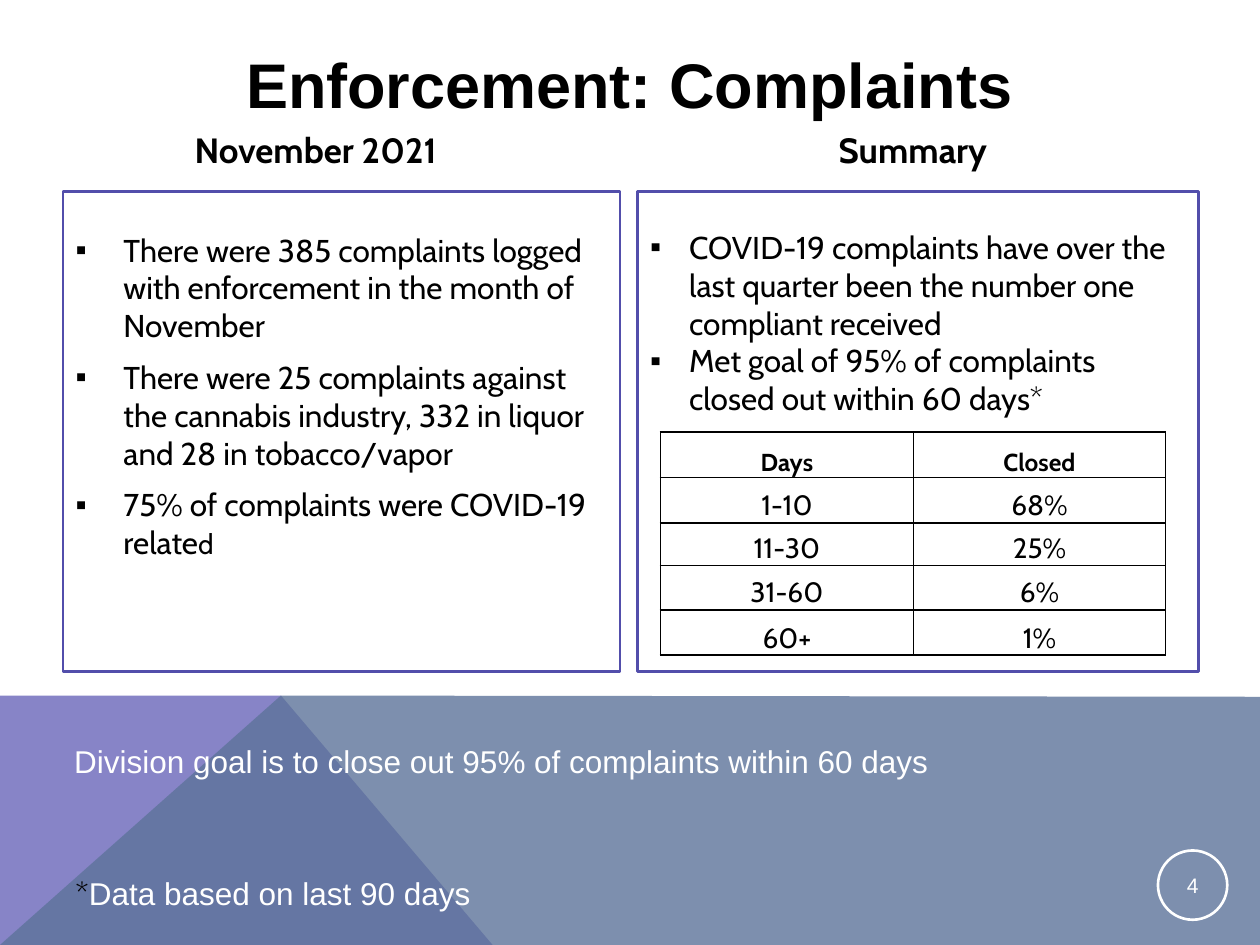
from lxml.etree import SubElement
from pptx import Presentation
from pptx.dml.color import RGBColor
from pptx.enum.shapes import MSO_SHAPE
from pptx.enum.text import MSO_ANCHOR, MSO_AUTO_SIZE, PP_ALIGN
from pptx.oxml.ns import qn
from pptx.util import Inches, Pt

BLACK, WHITE, PANEL_LINE = "000000", "FFFFFF", "524EAB"
TITLE = "Enforcement: Complaints"
HEADINGS = [("November 2021", (1.36, 0.97, 2.29, 0.44)),
            ("Summary", (6.12, 0.97, 2.25, 0.44))]
MONTH_POINTS = [
    ["There were 385 complaints logged with enforcement in the month of November"],
    ["There were 25 complaints against the cannabis industry, 332 in liquor and 28 in tobacco/vapor"],
    ["75% of complaints were COVID-19 relate", "d"],
]
SUMMARY_POINTS = [
    ["COVID-19 complaints have over the last quarter been the number one compliant received"],
    ["Met goal of 95% of complaints closed out within 60 days*"],
]
CLOSING_TIMES = [("Days", "Closed"), ("1-10", "68%"), ("11-30", "25%"),
                 ("31-60", "6%"), ("60+", "1%")]
COLUMN_WIDTHS = [2.01, 2]
ROW_HEIGHTS = [0.36, 0.36, 0.34, 0.35, 0.36]
GOAL = "Division goal is to close out 95% of complaints within 60 days"
FOOTNOTE = ("*", "Data based on last 90 days")
PAGE_NUMBER = "4"
BAND_SHAPES = [
    ([(0, 7.5), (0, 5.52), (2.23, 5.52), (3.91, 7.5)], "8784C7", 100),
    ([(0, 7.5), (2.23, 5.52), (10, 5.53), (10, 7.5)], "5D739A", 80),
]


def color(value):
    return RGBColor.from_string(value)


def inches(values):
    return [Inches(value) for value in values]


def place(shape, area):
    shape.left, shape.top, shape.width, shape.height = inches(area)


def set_font(font, size, name, value, bold=False):
    font.size, font.name, font.bold = Pt(size), name, bold
    font.color.rgb = color(value)


def add_band_shape(page, corners, fill, opacity):
    points = [inches(corner) for corner in corners]
    builder = page.shapes.build_freeform(*points[0])
    builder.add_line_segments(points[1:], close=True)
    shape = builder.convert_to_shape()
    shape.shadow.inherit = False
    shape.line.fill.background()
    shape.fill.solid()
    shape.fill.fore_color.rgb = color(fill)
    if opacity < 100:
        tint = shape.fill._xPr.find(qn("a:solidFill"))[0]
        SubElement(tint, qn("a:alpha"), val=str(opacity * 1000))


def outline(shape, value):
    shape.fill.background()
    shape.line.color.rgb = color(value)
    shape.line.width = Pt(1.5)


def add_outlined(page, kind, area, value):
    shape = page.shapes.add_shape(kind, *inches(area))
    shape.shadow.inherit = False
    outline(shape, value)
    return shape


def add_text(page, area, text, size, name, value, bold=False, align=PP_ALIGN.LEFT):
    box = page.shapes.add_textbox(*inches(area))
    box.text_frame.word_wrap = True
    para = box.text_frame.paragraphs[0]
    para.text, para.alignment = text, align
    set_font(para.font, size, name, value, bold)
    return para


def fill_list(box, area, points, indent, gap, top):
    place(box, area)
    frame = box.text_frame
    frame.auto_size, frame.word_wrap = MSO_AUTO_SIZE.NONE, True
    frame.vertical_anchor, frame.margin_top = MSO_ANCHOR.TOP, Inches(top)
    for number, pieces in enumerate(points):
        para = frame.add_paragraph() if number else frame.paragraphs[0]
        for piece in pieces:
            para.add_run().text = piece
        properties = para._p.get_or_add_pPr()
        properties.set("marL", str(Inches(indent)))
        properties.set("indent", str(-Inches(indent)))
        SubElement(properties, qn("a:buFont"), typeface="Arial")
        SubElement(properties, qn("a:buChar"), char="▪")
        para.space_before = Pt(gap if number else 0)
        set_font(para.font, 18, "Cabin", BLACK)


def add_borders(cell):
    properties = cell._tc.get_or_add_tcPr()
    for side in ("lnL", "lnR", "lnT", "lnB"):
        line = SubElement(properties, qn(f"a:{side}"), w=str(Pt(1)))
        SubElement(SubElement(line, qn("a:solidFill")), qn("a:srgbClr"), val=BLACK)


def add_closing_table(page):
    area = (5.24, 3.43, sum(COLUMN_WIDTHS), sum(ROW_HEIGHTS))
    table = page.shapes.add_table(len(ROW_HEIGHTS), len(COLUMN_WIDTHS), *inches(area)).table
    for column, width in zip(table.columns, COLUMN_WIDTHS):
        column.width = Inches(width)
    for row, height, values in zip(table.rows, ROW_HEIGHTS, CLOSING_TIMES):
        row.height = Inches(height)
        header = values == CLOSING_TIMES[0]
        for cell, value in zip(row.cells, values):
            add_borders(cell)
            cell.fill.solid()
            cell.fill.fore_color.rgb = color(WHITE)
            cell.vertical_anchor = MSO_ANCHOR.BOTTOM
            cell.margin_left = cell.margin_right = cell.margin_top = Inches(0.01)
            cell.margin_bottom = 0
            para = cell.text_frame.paragraphs[0]
            para.text, para.alignment, para.line_spacing = value, PP_ALIGN.CENTER, 1.07
            set_font(para.font, 14 if header else 16, "Cabin", BLACK, header)


def add_page_number(page):
    badge = add_outlined(page, MSO_SHAPE.OVAL, (9.19, 6.75, 0.55, 0.55), WHITE)
    frame = badge.text_frame
    frame.margin_left = frame.margin_right = Inches(0.01)
    frame.margin_top = frame.margin_bottom = Inches(0.01)
    frame.vertical_anchor = MSO_ANCHOR.MIDDLE
    para = frame.paragraphs[0]
    para.text, para.alignment = PAGE_NUMBER, PP_ALIGN.CENTER
    set_font(para.font, 12, "Arial", WHITE)


def main():
    deck = Presentation()
    deck.slide_width, deck.slide_height = Inches(10), Inches(7.5)
    page = deck.slides.add_slide(deck.slide_layouts.get_by_name("Two Content"))
    title, month, summary = page.placeholders

    for corners, fill, opacity in BAND_SHAPES:
        add_band_shape(page, corners, fill, opacity)

    place(title, (0.49, 0.36, 9.01, 0.6))
    title.text_frame.auto_size = MSO_AUTO_SIZE.NONE
    title.text_frame.vertical_anchor = MSO_ANCHOR.MIDDLE
    para = title.text_frame.paragraphs[0]
    para.text, para.alignment = TITLE, PP_ALIGN.CENTER
    set_font(para.font, 36, "Arial", BLACK, True)

    for text, area in HEADINGS:
        add_text(page, area, text, 20, "Cabin", BLACK, True, PP_ALIGN.CENTER)

    fill_list(month, (0.5, 1.52, 4.42, 3.81), MONTH_POINTS, 0.38, 8, 0.31)
    outline(month, PANEL_LINE)
    month.text_frame.paragraphs[-1].runs[-1].font.size = Pt(16)
    fill_list(summary, (5.06, 1.76, 4.45, 1.62), SUMMARY_POINTS, 0.31, 0, 0.05)
    add_outlined(page, MSO_SHAPE.RECTANGLE, (5.06, 1.52, 4.45, 3.81), PANEL_LINE)
    add_closing_table(page)

    add_text(page, (0.49, 5.84, 8.5, 0.4), GOAL, 18, "Arial", WHITE)
    star, note = FOOTNOTE
    para = add_text(page, (0.5, 6.89, 3.54, 0.4), star, 18, "Cabin", BLACK)
    span = para.add_run()
    span.text = note
    set_font(span.font, 18, "Arial", WHITE)
    add_page_number(page)

    deck.save("out.pptx")


if __name__ == "__main__":
    main()
